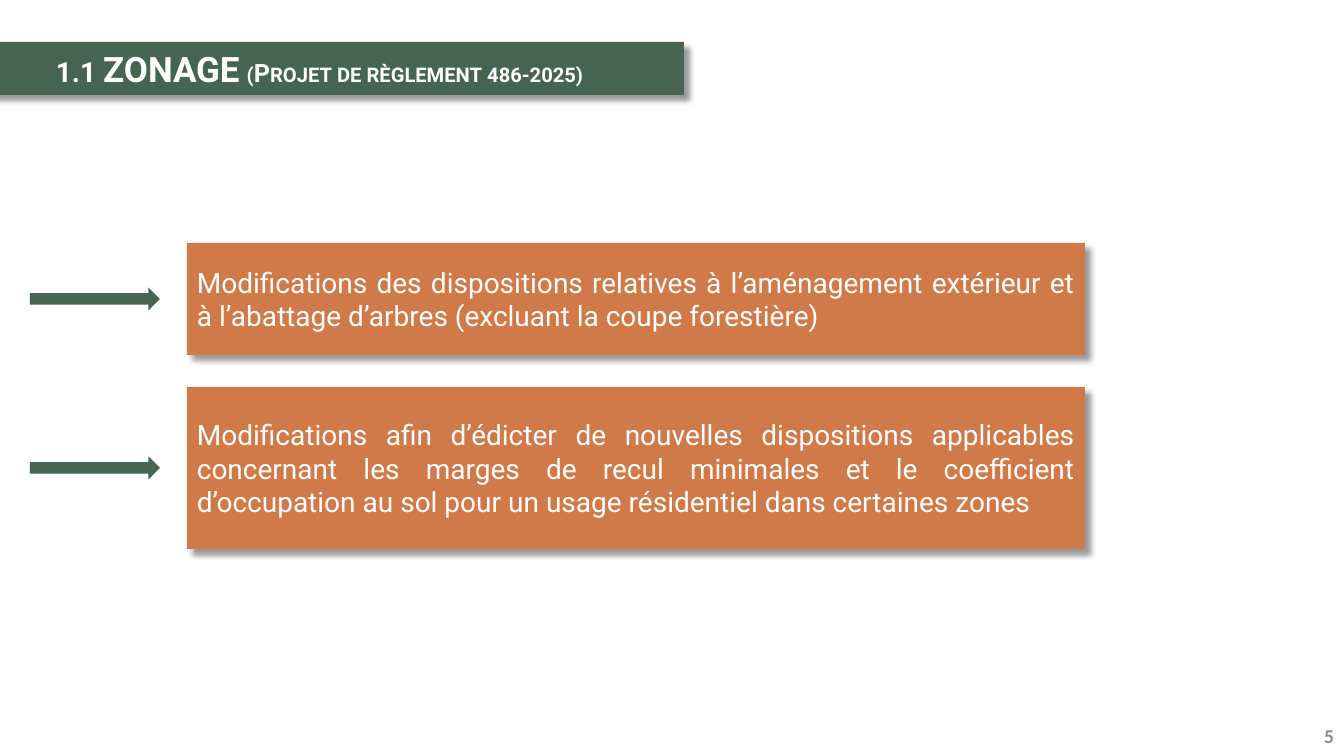
from lxml import etree
from pptx import Presentation
from pptx.dml.color import RGBColor
from pptx.enum.shapes import MSO_SHAPE as Shape
from pptx.enum.text import MSO_ANCHOR as Anchor, PP_ALIGN as Align
from pptx.oxml.ns import qn
from pptx.util import Pt

# Content
TITLE = [("1.1 ZONAGE ", 25), ("(Projet de règlement 486-2025)", 18)]
PAGE_NUMBER = "5"
CHANGES = [  # top, height, text
    (243, 112, "Modifications des dispositions relatives à l’aménagement extérieur "
               "et à l’abattage d’arbres (excluant la coupe forestière)"),
    (387, 162, "Modifications afin d’édicter de nouvelles dispositions applicables "
               "concernant les marges de recul minimales et le coefficient "
               "d’occupation au sol pour un usage résidentiel dans certaines zones"),
]

# Layout in px, colours
WIDTH, HEIGHT = 1344, 756
BANNER = (-14, 42, 698, 53)
NUMBER = (1041, 716, 303, 40)
BOX_LEFT, BOX_WIDTH = 187, 898
ARROW_LEFT, ARROW_WIDTH, ARROW_HEIGHT = 30, 130, 23
TITLE_INDENT = 60
GREEN, ORANGE, WHITE, GREY = "456451", "D07949", "FFFFFF", "8C8C8C"


def px(length):
    return round(length * 914400 / 100.8)


def color(code):
    return RGBColor.from_string(code)


def add_block(page, kind, place, fill):
    block = page.shapes.add_shape(kind, *map(px, place))
    block.shadow.inherit = False
    block.fill.solid()
    block.fill.fore_color.rgb = color(fill)
    block.line.fill.background()
    return block


def add_shadow(block):
    effects = block._element.spPr.find(qn("a:effectLst"))
    shadow = etree.SubElement(effects, qn("a:outerShdw"), blurRad=str(Pt(4)),
                              dist=str(Pt(5)), dir=str(45 * 60000),
                              algn="tl", rotWithShape="0")
    tint = etree.SubElement(shadow, qn("a:srgbClr"), val="000000")
    etree.SubElement(tint, qn("a:alpha"), val="40000")


def write(box, spans, align, font="Roboto", ink=WHITE, bold=False):
    frame = box.text_frame
    frame.word_wrap = True
    frame.vertical_anchor = Anchor.MIDDLE
    para = frame.paragraphs[0]
    para.alignment = align
    for text, size in spans:
        span = para.add_run()
        span.text = text
        span.font.name = font
        span.font.size = Pt(size)
        span.font.bold = bold
        span.font.color.rgb = color(ink)
    return para


deck = Presentation()
deck.slide_width, deck.slide_height = px(WIDTH), px(HEIGHT)
page = deck.slides.add_slide(deck.slide_layouts[6])

# Page number
number = page.shapes.add_textbox(*map(px, NUMBER))
write(number, [(PAGE_NUMBER, 14)], Align.RIGHT, "Calibri", GREY, True)

# Title banner in small capitals
banner = add_block(page, Shape.RECTANGLE, BANNER, GREEN)
add_shadow(banner)
title = write(banner, TITLE, Align.LEFT, bold=True)
title._p.get_or_add_pPr().set("marL", str(px(TITLE_INDENT)))
for span in title.runs:
    span.font._element.set("cap", "small")

# Changes, each with an arrow at mid-height
for top, height, text in CHANGES:
    box = add_block(page, Shape.RECTANGLE, (BOX_LEFT, top, BOX_WIDTH, height), ORANGE)
    add_shadow(box)
    write(box, [(text, 20)], Align.JUSTIFY)
    arrow_top = top + (height - ARROW_HEIGHT) / 2
    add_block(page, Shape.RIGHT_ARROW,
              (ARROW_LEFT, arrow_top, ARROW_WIDTH, ARROW_HEIGHT), GREEN)

deck.save("out.pptx")
